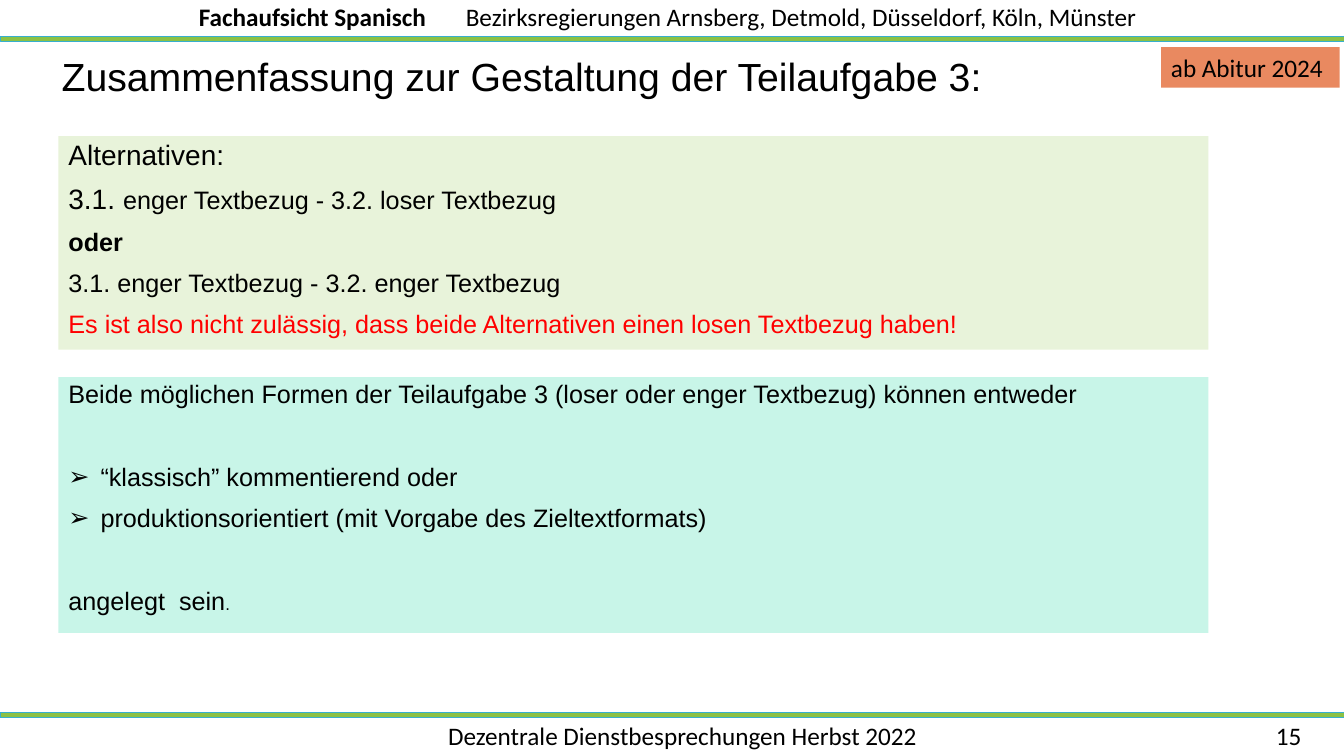
from dataclasses import dataclass

from lxml import etree
from pptx import Presentation
from pptx.dml.color import RGBColor
from pptx.enum.shapes import MSO_SHAPE
from pptx.enum.text import MSO_ANCHOR, MSO_AUTO_SIZE, PP_ALIGN
from pptx.oxml.ns import qn
from pptx.util import Cm, Pt

RECTANGLE = MSO_SHAPE.RECTANGLE
TOP = MSO_ANCHOR.TOP
NO_AUTOFIT = MSO_AUTO_SIZE.NONE
LEFT, CENTER, RIGHT = PP_ALIGN.LEFT, PP_ALIGN.CENTER, PP_ALIGN.RIGHT
TWO_CONTENT_LAYOUT = 3


@dataclass(frozen=True)
class Theme:
    content_font: str = "Arial"
    frame_font: str = "Calibri"
    black: str = "000000"
    warning: str = "FF0000"
    rule_fill: str = "8BC145"
    rule_line: str = "36AFCE"
    alternatives_fill: str = "E8F3DA"
    forms_fill: str = "C8F5E8"
    badge_fill: str = "E98960"
    title_size: int = 28
    lead_size: int = 20
    text_size: int = 18
    small_size: int = 12


THEME = Theme()

# Each paragraph is a pair: runs as (text, run format), then paragraph format.
TITLE = [([("Zusammenfassung zur Gestaltung der Teilaufgabe 3:", {"size": THEME.title_size})], {})]
ALTERNATIVES = [
    ([("Alternativen:", {"size": THEME.lead_size})], {}),
    ([("3.1. ", {"size": THEME.lead_size}), ("enger Textbezug - 3.2. loser Textbezug", {})], {}),
    ([("oder", {"bold": True})], {}),
    ([("3.1. enger Textbezug - 3.2. enger Textbezug", {})], {}),
    ([("Es ist also nicht zulässig, dass beide Alternativen einen losen Textbezug haben!",
       {"color": THEME.warning})], {}),
]
SECTION_GAP = 39.6
FORMS = [
    ([("Beide möglichen Formen der Teilaufgabe 3 (loser oder enger Textbezug) können entweder", {})], {}),
    ([("“klassisch” kommentierend oder", {})], {"bullet": "➢", "before": SECTION_GAP}),
    ([("produktionsorientiert (mit Vorgabe des Zieltextformats)", {})], {"bullet": "➢"}),
    ([("angelegt  sein", {}), (".", {"size": THEME.small_size})], {"before": SECTION_GAP}),
]

SLIDE_WIDTH, SLIDE_HEIGHT = 33.87, 19.05
FRAME_HEIGHT = 1.02
HEADER_TOP, FOOTER_TOP = -0.08, 18.03
RULE_TOPS, RULE_HEIGHT = (0.91, 17.96), 0.13
PANEL_LEFT, PANEL_WIDTH = 1.47, 28.98
BULLET_INDENT = 0.81

# text, (left, top, width), format
FRAME_TEXTS = [
    ("Fachaufsicht Spanisch", (0, HEADER_TOP, 10.99), {"align": RIGHT, "bold": True}),
    ("Bezirksregierungen Arnsberg, Detmold, Düsseldorf, Köln, Münster",
     (11.49, HEADER_TOP, 20), {"align": LEFT}),
    ("Dezentrale Dienstbesprechungen Herbst 2022", (8.59, FOOTER_TOP, 17.22), {"align": CENTER}),
    ("15", (25.68, FOOTER_TOP, 7.37), {"align": RIGHT}),
]
BADGE = ("ab Abitur 2024", (29.26, 1.19, 4.5, FRAME_HEIGHT))


def lengths(*values):
    return [Cm(value) for value in values]


def paint(shape, fill, line=None):
    shape.fill.solid()
    shape.fill.fore_color.rgb = RGBColor.from_string(fill)
    if line:
        shape.line.color.rgb = RGBColor.from_string(line)
        shape.line.width = Pt(0.5)
    else:
        shape.line.fill.background()


def add_rectangle(slide, box, fill, line=None):
    rectangle = slide.shapes.add_shape(RECTANGLE, *lengths(*box))
    rectangle.shadow.inherit = False
    paint(rectangle, fill, line)
    return rectangle


def add_text(paragraph, text, *, font=THEME.content_font, size=THEME.text_size,
             color=THEME.black, bold=False):
    run = paragraph.add_run()
    run.text = text
    run.font.name = font
    run.font.size = Pt(size)
    run.font.bold = bold
    run.font.color.rgb = RGBColor.from_string(color)


def set_bullet(paragraph, bullet):
    """Give the paragraph a hanging bullet, or switch the inherited one off."""
    properties = paragraph._p.get_or_add_pPr()
    indent = Cm(BULLET_INDENT) if bullet else 0
    properties.set("marL", str(indent))
    properties.set("indent", str(-indent))
    if bullet:
        etree.SubElement(properties, qn("a:buFont")).set("typeface", THEME.content_font)
        etree.SubElement(properties, qn("a:buChar")).set("char", bullet)
    else:
        etree.SubElement(properties, qn("a:buNone"))


def prepare_frame(shape):
    frame = shape.text_frame
    frame.word_wrap = True
    frame.auto_size = NO_AUTOFIT
    frame.vertical_anchor = TOP
    return frame


def fill_placeholder(placeholder, box, paragraphs, fill=None):
    placeholder.left, placeholder.top, placeholder.width, placeholder.height = lengths(*box)
    if fill:
        paint(placeholder, fill)
    frame = prepare_frame(placeholder)
    for index, (runs, layout) in enumerate(paragraphs):
        paragraph = frame.add_paragraph() if index else frame.paragraphs[0]
        paragraph.alignment = LEFT
        paragraph.line_spacing = 0.9
        paragraph.space_before = Pt(layout.get("before", 10) if index else 0)
        set_bullet(paragraph, layout.get("bullet"))
        for text, style in runs:
            add_text(paragraph, text, **style)


def fill_line(shape, text, align=LEFT, **style):
    paragraph = prepare_frame(shape).paragraphs[0]
    paragraph.alignment = align
    add_text(paragraph, text, font=THEME.frame_font, **style)


def main():
    presentation = Presentation()
    presentation.slide_width, presentation.slide_height = lengths(SLIDE_WIDTH, SLIDE_HEIGHT)
    slide = presentation.slides.add_slide(presentation.slide_layouts[TWO_CONTENT_LAYOUT])
    for placeholder in list(slide.placeholders)[3:]:
        placeholder._element.getparent().remove(placeholder._element)
    title, alternatives, forms = slide.placeholders

    for top in RULE_TOPS:
        add_rectangle(slide, (0, top, SLIDE_WIDTH, RULE_HEIGHT), THEME.rule_fill, THEME.rule_line)
    for text, (left, top, width), style in FRAME_TEXTS:
        box = slide.shapes.add_textbox(*lengths(left, top, width, FRAME_HEIGHT))
        fill_line(box, text, **style)

    fill_placeholder(title, (1.3, 1.32, PANEL_WIDTH, 1.37), TITLE)
    fill_placeholder(alternatives, (PANEL_LEFT, 3.43, PANEL_WIDTH, 5.38),
                     ALTERNATIVES, THEME.alternatives_fill)
    fill_placeholder(forms, (PANEL_LEFT, 9.5, PANEL_WIDTH, 6.45), FORMS, THEME.forms_fill)

    badge_text, badge_box = BADGE
    fill_line(add_rectangle(slide, badge_box, THEME.badge_fill), badge_text)
    presentation.save("out.pptx")


if __name__ == "__main__":
    main()
